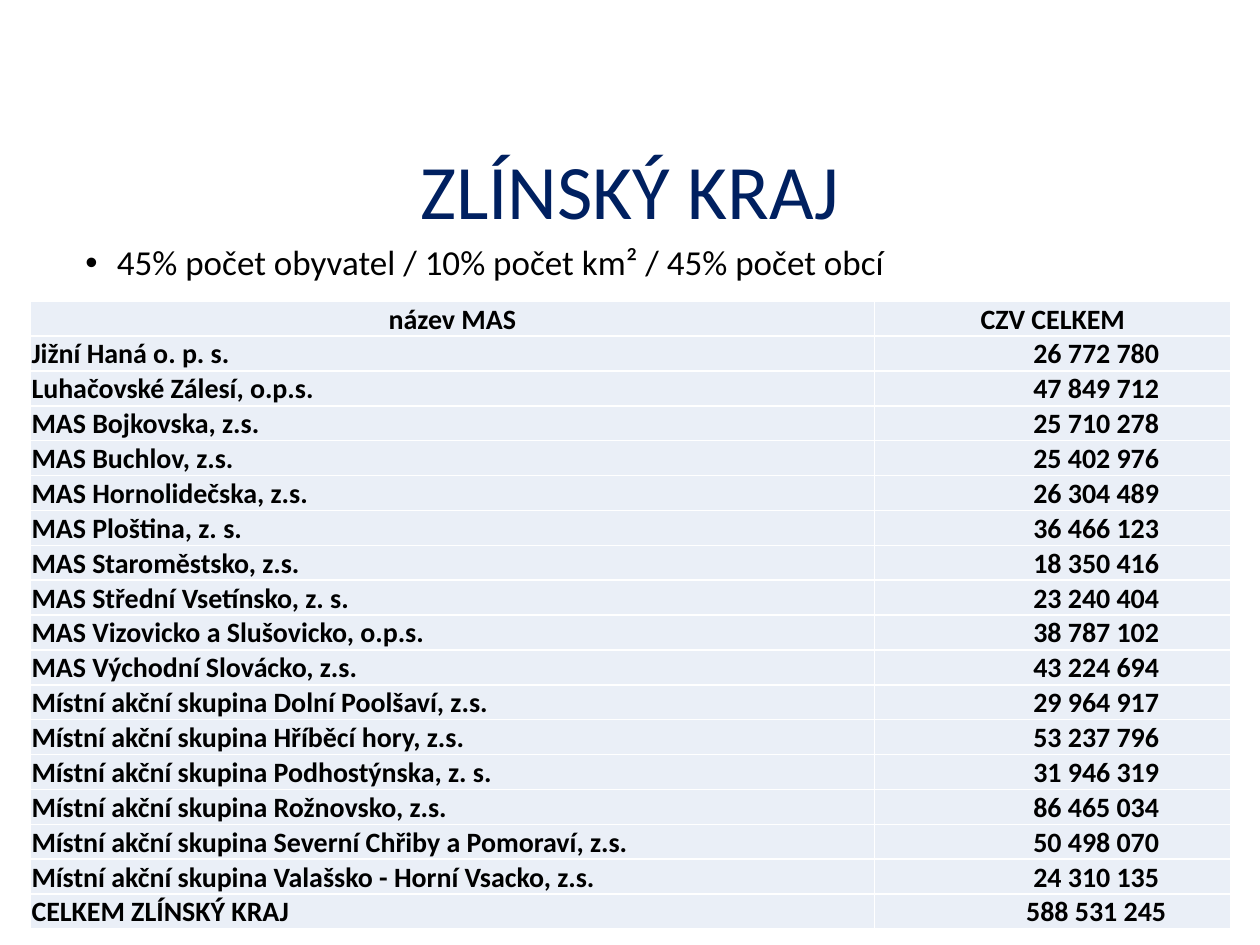
from lxml.etree import SubElement
from pptx import Presentation
from pptx.dml.color import RGBColor
from pptx.enum.text import MSO_ANCHOR as Anchor, PP_ALIGN as Align
from pptx.oxml.ns import qn
from pptx.util import Inches, Pt

COLORS = {"title": "002060", "text": "000000", "cell": "EAEFF7", "border": "FFFFFF"}

ROWS = [
    ("název MAS", "CZV CELKEM"),
    ("Jižní Haná o. p. s.", "26 772 780"),
    ("Luhačovské Zálesí, o.p.s.", "47 849 712"),
    ("MAS Bojkovska, z.s.", "25 710 278"),
    ("MAS Buchlov, z.s.", "25 402 976"),
    ("MAS Hornolidečska, z.s.", "26 304 489"),
    ("MAS Ploština, z. s.", "36 466 123"),
    ("MAS Staroměstsko, z.s.", "18 350 416"),
    ("MAS Střední Vsetínsko, z. s.", "23 240 404"),
    ("MAS Vizovicko a Slušovicko, o.p.s.", "38 787 102"),
    ("MAS Východní Slovácko, z.s.", "43 224 694"),
    ("Místní akční skupina Dolní Poolšaví, z.s.", "29 964 917"),
    ("Místní akční skupina Hříběcí hory, z.s.", "53 237 796"),
    ("Místní akční skupina Podhostýnska, z. s.", "31 946 319"),
    ("Místní akční skupina Rožnovsko, z.s.", "86 465 034"),
    ("Místní akční skupina Severní Chřiby a Pomoraví, z.s.", "50 498 070"),
    ("Místní akční skupina Valašsko - Horní Vsacko, z.s.", "24 310 135"),
    ("CELKEM ZLÍNSKÝ KRAJ", "588 531 245"),
]


def write(para, text, size, color, bold=False):
    span = para.add_run()
    span.text = text
    for name, value in {"name": "Calibri", "size": Pt(size), "bold": bold}.items():
        setattr(span.font, name, value)
    span.font.color.rgb = RGBColor.from_string(COLORS[color])


def add_borders(cell):
    """Draw a thin line on all four sides of a table cell."""
    props = cell._tc.get_or_add_tcPr()
    for index, side in enumerate(("lnL", "lnR", "lnT", "lnB")):
        line = props.makeelement(qn(f"a:{side}"), {"w": str(Pt(1))})
        fill = SubElement(line, qn("a:solidFill"))
        SubElement(fill, qn("a:srgbClr"), val=COLORS["border"])
        props.insert(index, line)


deck = Presentation()
deck.slide_width, deck.slide_height = Inches(10), Inches(7.5)
page = deck.slides.add_slide(deck.slide_layouts[6])

# Title
box = page.shapes.add_textbox(Inches(0.69), Inches(0.82), Inches(8.62), Inches(1.45))
frame = box.text_frame
frame.word_wrap = True
frame.vertical_anchor = Anchor.MIDDLE
para = frame.paragraphs[0]
para.alignment = Align.CENTER
para.line_spacing = 0.9
write(para, "ZLÍNSKÝ KRAJ", 44, "title")

# Allocation rule
box = page.shapes.add_textbox(Inches(0.08), Inches(1.9), Inches(9.1), Inches(4.76))
box.text_frame.word_wrap = True
para = box.text_frame.paragraphs[0]
props = para._p.get_or_add_pPr()
props.set("marL", str(Inches(0.75)))
props.set("indent", str(Inches(-0.25)))
SubElement(props, qn("a:buFont"), typeface="Arial")
SubElement(props, qn("a:buChar"), char="•")
para.line_spacing = 0.9
write(para, "45% počet obyvatel / 10% počet km² / 45% počet obcí", 20, "text")

# Allocations by local action group
widths = (Inches(6.7), Inches(2.83))
row_height = Inches(0.25)
table = page.shapes.add_table(len(ROWS), len(widths), Inches(0.24), Inches(2.39),
                              sum(widths), row_height * len(ROWS)).table
for column, width in zip(table.columns, widths):
    column.width = width

last = len(ROWS) - 1
for r, row in enumerate(ROWS):
    for c, text in enumerate(row):
        cell = table.cell(r, c)
        is_value = c == 1 and r > 0
        at_bottom = c == 1 and r in (0, last)
        cell_format = {
            "margin_left": Inches(0.7 if is_value else 0.01),
            "margin_right": Inches(0.01),
            "margin_top": Inches(0.01),
            "margin_bottom": 0,
            "vertical_anchor": Anchor.BOTTOM if at_bottom else Anchor.MIDDLE,
        }
        for name, value in cell_format.items():
            setattr(cell, name, value)
        cell.fill.solid()
        cell.fill.fore_color.rgb = RGBColor.from_string(COLORS["cell"])
        add_borders(cell)
        para = cell.text_frame.paragraphs[0]
        para.alignment = Align.CENTER if c == 1 or r == 0 else Align.LEFT
        write(para, text, 16, "text", bold=True)

deck.save("out.pptx")
